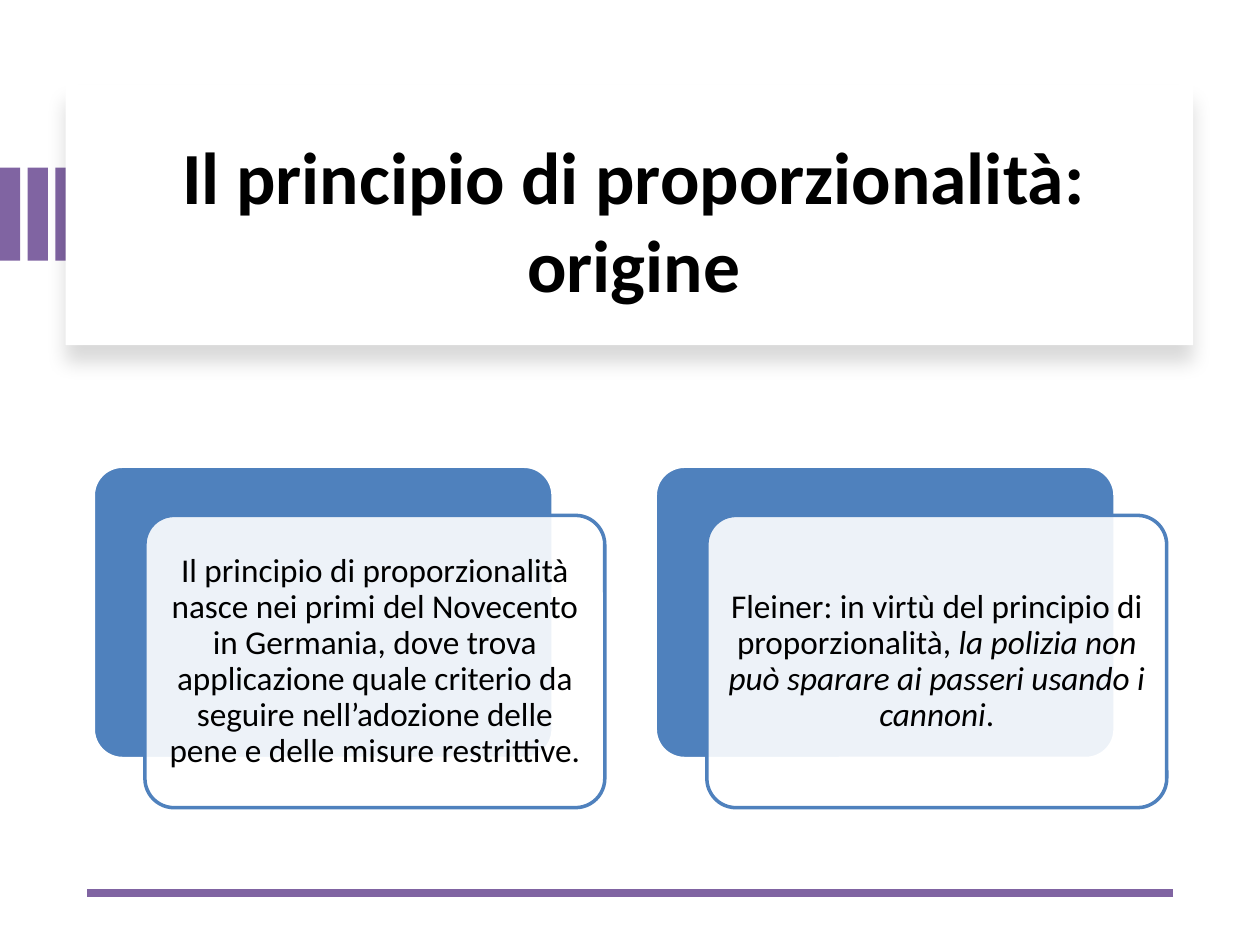
from lxml.etree import SubElement
from pptx import Presentation
from pptx.dml.color import RGBColor
from pptx.enum.shapes import MSO_CONNECTOR as Connector, MSO_SHAPE as Shape
from pptx.enum.text import MSO_ANCHOR as Anchor, PP_ALIGN as Align
from pptx.oxml.ns import qn
from pptx.util import Inches, Pt

WHITE = RGBColor(0xFF, 0xFF, 0xFF)
BLACK = RGBColor(0x00, 0x00, 0x00)
PURPLE = RGBColor(0x80, 0x64, 0xA2)
BLUE = RGBColor(0x4F, 0x81, 0xBD)

FONT = "Calibri"
COLUMNS, ROWS = 100, 75
CELL = Inches(0.1)

STRIPE_STEP = 2.2
CARD_LEFT, CARD_TOP, CARD_STEP = 7.4, 37, 44.6
CARD_WIDTH, CARD_HEIGHT = 36.5, 23.2
FRONT_SHIFT_X, FRONT_SHIFT_Y = 4.1, 3.9
TEXT_MARGIN = 0.7

CARDS = [
    [("Il principio di proporzionalità nasce nei primi del Novecento in Germania, "
      "dove trova applicazione quale criterio da seguire nell’adozione delle pene "
      "e delle misure restrittive.", False)],
    [("Fleiner: in virtù del principio di proporzionalità, ", False),
     ("la polizia non può sparare ai passeri usando i cannoni", True),
     (".", False)],
]


def grid(*counts):
    """Turn counts of grid cells into slide lengths."""
    return [round(count * CELL) for count in counts]


def add_panel(slide, box, fill, outline=None, rounding=None, opacity=None):
    kind = Shape.RECTANGLE if rounding is None else Shape.ROUNDED_RECTANGLE
    panel = slide.shapes.add_shape(kind, *grid(*box))
    panel.shadow.inherit = False
    panel.fill.solid()
    panel.fill.fore_color.rgb = fill
    if rounding is not None:
        panel.adjustments[0] = rounding
    if outline is None:
        panel.line.fill.background()
    else:
        panel.line.color.rgb = outline
        panel.line.width = Pt(2)
    if opacity is not None:
        color = panel.fill._xPr.find(qn("a:solidFill"))[0]
        SubElement(color, qn("a:alpha"), val=str(opacity * 1000))
    return panel


def cast_shadow(panel, blur, distance, opacity):
    """Drop a soft black shadow straight below the panel."""
    effects = panel._element.spPr.find(qn("a:effectLst"))
    shadow = SubElement(effects, qn("a:outerShdw"), blurRad=str(Pt(blur)),
                        dist=str(Pt(distance)), dir=str(90 * 60000),
                        algn="t", rotWithShape="0")
    color = SubElement(shadow, qn("a:srgbClr"), val=str(BLACK))
    SubElement(color, qn("a:alpha"), val=str(opacity * 1000))


def add_text(slide, box, runs, size, bold=False, inset=None, spacing=None, after=0):
    frame = slide.shapes.add_textbox(*grid(*box)).text_frame
    frame.word_wrap = True
    frame.vertical_anchor = Anchor.MIDDLE
    if inset is not None:
        frame.margin_left = frame.margin_right = Inches(inset)
        frame.margin_top = frame.margin_bottom = Inches(inset)
    paragraph = frame.paragraphs[0]
    paragraph.alignment = Align.CENTER
    paragraph.line_spacing = spacing
    paragraph.space_after = Pt(after)
    for text, italic in runs:
        run = paragraph.add_run()
        run.text = text
        run.font.name = FONT
        run.font.size = Pt(size)
        run.font.bold = bold
        run.font.italic = italic
        run.font.color.rgb = BLACK


def add_rule(slide, start, end, color, width):
    rule = slide.shapes.add_connector(Connector.STRAIGHT, *grid(*start, *end))
    rule.line.color.rgb = color
    rule.line.width = Pt(width)
    SubElement(rule._element.spPr, qn("a:effectLst"))


def add_card(slide, left, runs):
    """Blue card with a translucent card in front that holds the text."""
    front_left, front_top = left + FRONT_SHIFT_X, CARD_TOP + FRONT_SHIFT_Y
    add_panel(slide, (left, CARD_TOP, CARD_WIDTH, CARD_HEIGHT),
              BLUE, outline=WHITE, rounding=0.1)
    add_panel(slide, (front_left, front_top, CARD_WIDTH, CARD_HEIGHT),
              WHITE, outline=BLUE, rounding=0.1, opacity=90)
    text_box = (front_left + TEXT_MARGIN, front_top + TEXT_MARGIN,
                CARD_WIDTH - 2 * TEXT_MARGIN, CARD_HEIGHT - 2 * TEXT_MARGIN)
    add_text(slide, text_box, runs, size=19, inset=0.08, spacing=0.9, after=6.65)


def main():
    deck = Presentation()
    deck.slide_width, deck.slide_height = grid(COLUMNS, ROWS)
    slide = deck.slides.add_slide(deck.slide_layouts[6])

    for index in range(3):
        add_panel(slide, (index * STRIPE_STEP, 13.3, 1.6, 7.4), PURPLE)
    banner = add_panel(slide, (5.2, 6.7, 89.5, 20.7), WHITE)
    cast_shadow(banner, blur=11, distance=10, opacity=15)
    add_text(slide, (8.6, 8.9, 83.4, 17),
             [("Il principio di proporzionalità: origine", False)], size=42, bold=True)
    add_rule(slide, (93.1, 70.9), (6.9, 70.9), PURPLE, width=4.5)

    for index, runs in enumerate(CARDS):
        add_card(slide, CARD_LEFT + index * CARD_STEP, runs)

    deck.save("out.pptx")


if __name__ == "__main__":
    main()
